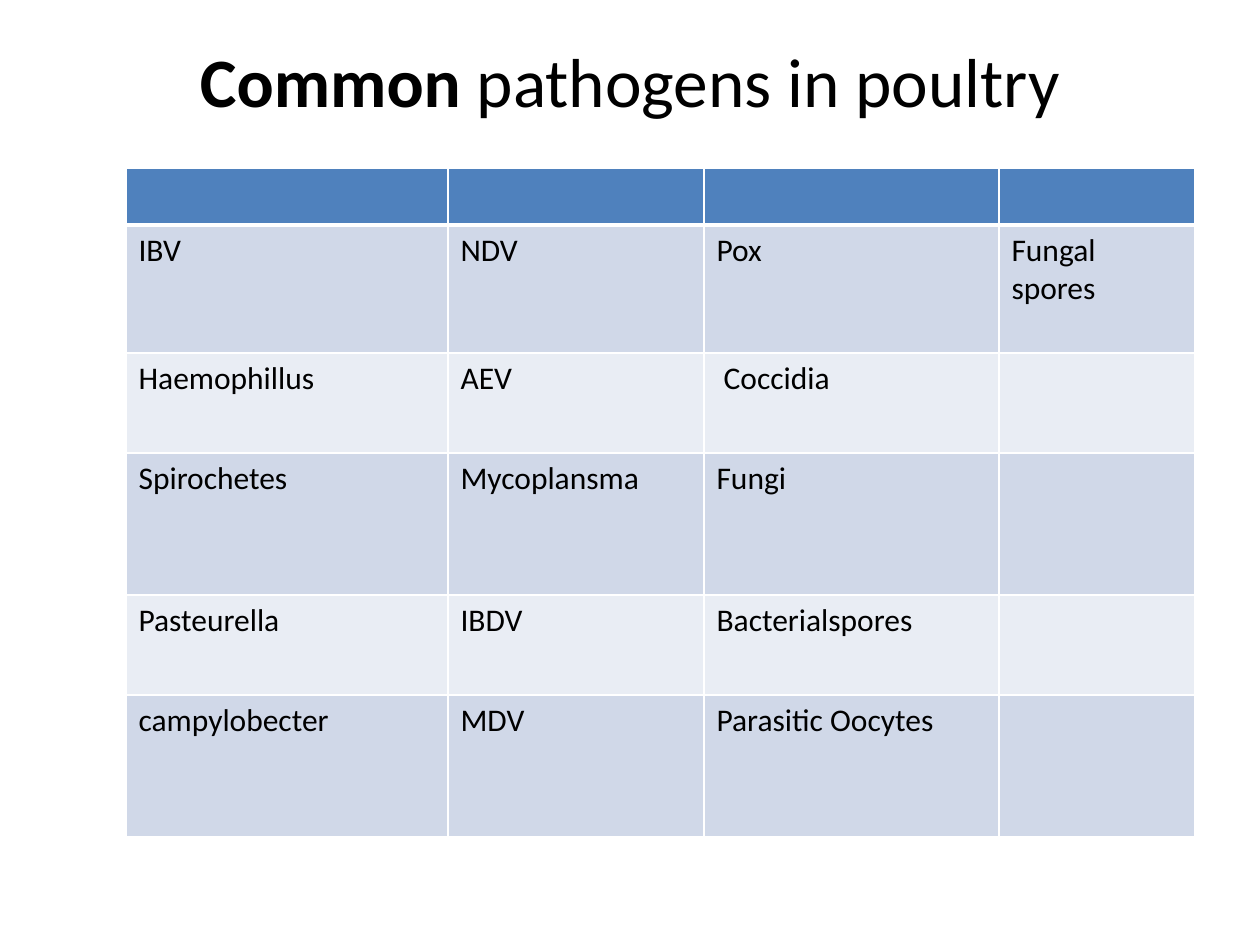
from lxml import etree
from pptx import Presentation
from pptx import util as u
from pptx.dml.color import RGBColor
from pptx.enum import text
from pptx.oxml.ns import qn

TITLE = [("Common ", True), ("pathogens in poultry", False)]
ROWS = [
    ("", "", "", ""),
    ("IBV", "NDV", "Pox", "Fungal spores"),
    ("Haemophillus", "AEV", " Coccidia", ""),
    ("Spirochetes", "Mycoplansma", "Fungi", ""),
    ("Pasteurella", "IBDV", "Bacterialspores", ""),
    ("campylobecter", "MDV", "Parasitic Oocytes", ""),
]
COL_WIDTHS = [322, 256, 295, 196]
ROW_HEIGHTS = [57, 128, 100, 142, 100, 142]

FONT = "Calibri"
BLACK = RGBColor(0x00, 0x00, 0x00)
WHITE = RGBColor(0xFF, 0xFF, 0xFF)
HEADER = RGBColor(0x4F, 0x81, 0xBD)
BANDS = [RGBColor(0xE9, 0xED, 0xF4), RGBColor(0xD0, 0xD8, 0xE8)]


def px(n):
    return u.Emu(round(n * 914400 / 126))


def add_run(p, words, size, bold=False):
    r = p.add_run()
    r.text = words
    r.font.name = FONT
    r.font.size = u.Pt(size)
    r.font.bold = bold
    r.font.color.rgb = BLACK


def set_borders(cell, widths):
    tc_pr = cell._tc.get_or_add_tcPr()
    for i, (side, width) in enumerate(widths.items()):
        ln = etree.Element(qn(f"a:ln{side}"), w=str(u.Pt(width)))
        fill = etree.SubElement(ln, qn("a:solidFill"))
        etree.SubElement(fill, qn("a:srgbClr"), val=str(WHITE))
        tc_pr.insert(i, ln)


def add_title(s):
    tf = s.shapes.add_textbox(px(63), px(38), px(1134), px(157)).text_frame
    tf.word_wrap = True
    tf.margin_top = 0
    tf.vertical_anchor = text.MSO_ANCHOR.TOP
    p = tf.paragraphs[0]
    p.alignment = text.PP_ALIGN.CENTER
    for words, bold in TITLE:
        add_run(p, words, 39.6, bold)


def add_pathogens(s):
    table = s.shapes.add_table(len(ROWS), len(COL_WIDTHS), px(126), px(168),
                               px(sum(COL_WIDTHS)), px(sum(ROW_HEIGHTS))).table
    for col, width in zip(table.columns, COL_WIDTHS):
        col.width = px(width)
    for i, (row, height) in enumerate(zip(table.rows, ROW_HEIGHTS)):
        row.height = px(height)
        for cell, words in zip(row.cells, ROWS[i]):
            cell.fill.solid()
            cell.fill.fore_color.rgb = BANDS[i % 2] if i else HEADER
            set_borders(cell, {"L": 1, "R": 1, "T": 3 if i == 1 else 1,
                               "B": 1 if i else 3})
            if words:
                add_run(cell.text_frame.paragraphs[0], words, 18)


def main():
    prs = Presentation()
    prs.slide_width, prs.slide_height = px(1260), px(945)
    s = prs.slides.add_slide(prs.slide_layouts[6])
    add_title(s)
    add_pathogens(s)
    prs.save("out.pptx")


if __name__ == "__main__":
    main()
